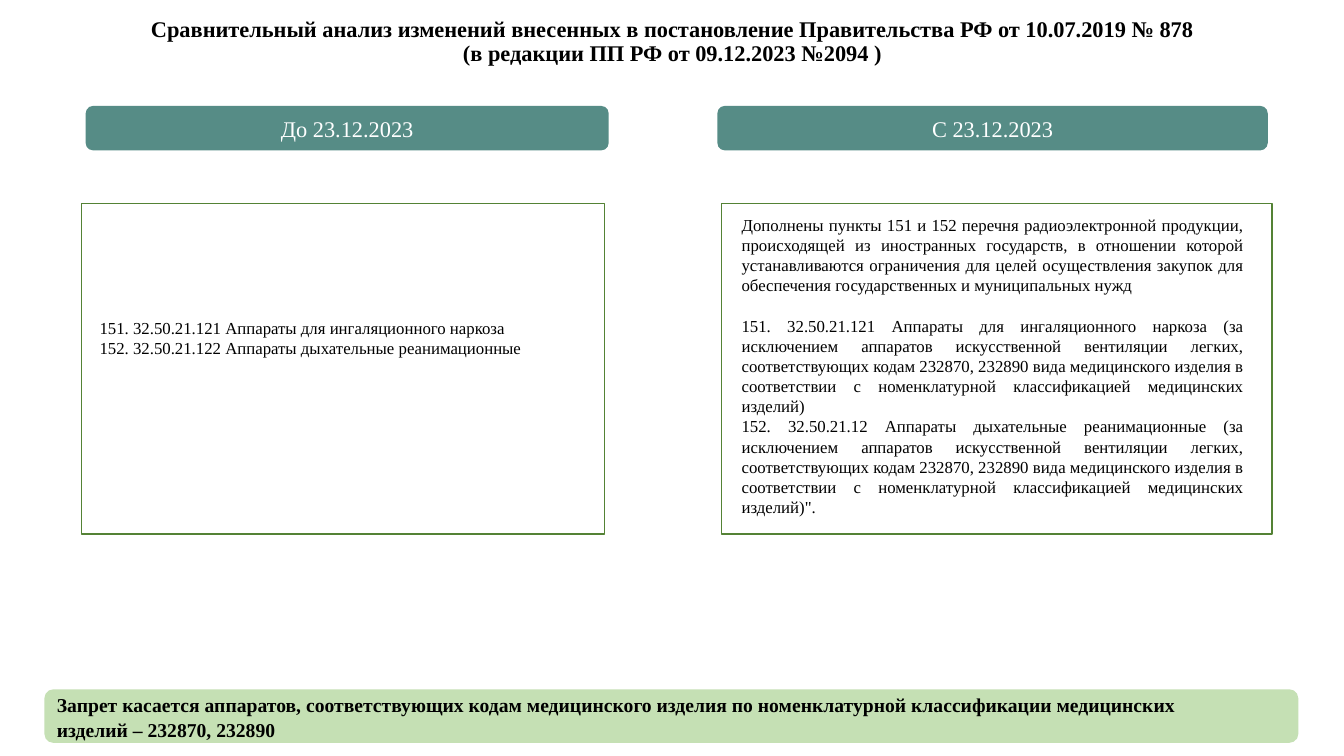
from dataclasses import dataclass

from pptx import Presentation
from pptx.dml.color import RGBColor
from pptx.enum.shapes import MSO_SHAPE
from pptx.enum.text import MSO_ANCHOR, PP_ALIGN
from pptx.util import Cm, Pt


@dataclass(frozen=True)
class Theme:
    """Colours, font and type sizes of the slide."""
    font: str = "Times New Roman"
    ink: str = "000000"
    light: str = "FFFFFF"
    header: str = "568C86"
    frame: str = "548235"
    note: str = "C5E0B4"
    heading_size: int = 16
    note_size: int = 14
    body_size: int = 12


def write(frame, paragraphs, *, font, size, color, bold=False, align=PP_ALIGN.LEFT,
          anchor=MSO_ANCHOR.TOP, spacing=1.0, gap_after_first=0):
    """Fill a text frame with equally formatted paragraphs."""
    frame.word_wrap = True
    frame.vertical_anchor = anchor
    for index, text in enumerate(paragraphs):
        para = frame.add_paragraph() if index else frame.paragraphs[0]
        para.alignment = align
        para.line_spacing = spacing
        if index == 0:
            para.space_after = Pt(gap_after_first)
        span = para.add_run()
        span.text = text
        span.font.name = font
        span.font.size = Pt(size)
        span.font.bold = bold
        span.font.color.rgb = RGBColor.from_string(color)


class ComparisonSlide:
    """Draws the elements of a before-and-after slide."""

    def __init__(self, page, theme):
        """Keep the page and its theme."""
        self.page = page
        self.theme = theme

    def text(self, place, paragraphs, size, **style):
        """Add a text box in the ink colour."""
        box = self.page.shapes.add_textbox(*map(Cm, place))
        write(box.text_frame, paragraphs, font=self.theme.font, size=size,
              color=self.theme.ink, **style)

    def bar(self, place, paragraphs, fill, size, color, **style):
        """Add a filled rounded bar with text."""
        box = self.page.shapes.add_shape(MSO_SHAPE.ROUNDED_RECTANGLE, *map(Cm, place))
        box.shadow.inherit = False
        box.fill.solid()
        box.fill.fore_color.rgb = RGBColor.from_string(fill)
        box.line.fill.background()
        write(box.text_frame, paragraphs, font=self.theme.font, size=size,
              color=color, anchor=MSO_ANCHOR.MIDDLE, **style)

    def panel(self, place):
        """Add an empty outlined panel."""
        box = self.page.shapes.add_shape(MSO_SHAPE.RECTANGLE, *map(Cm, place))
        box.shadow.inherit = False
        box.fill.background()
        box.line.color.rgb = RGBColor.from_string(self.theme.frame)
        box.line.width = Pt(1)


def main():
    """Build and save the slide."""
    theme = Theme()
    deck = Presentation()
    deck.slide_width, deck.slide_height = Cm(33.87), Cm(19.05)
    slide = ComparisonSlide(deck.slides.add_slide(deck.slide_layouts[6]), theme)

    slide.text((2.34, 0.51, 29.21, 1.12), [
        "Сравнительный анализ изменений внесенных в постановление Правительства РФ от 10.07.2019 № 878",
        "(в редакции ПП РФ от 09.12.2023 №2094 )",
    ], theme.heading_size, bold=True, align=PP_ALIGN.CENTER,
        anchor=MSO_ANCHOR.MIDDLE, spacing=0.9)

    columns = [("До 23.12.2023", 2.16, 2.06, 13.18),
               ("С 23.12.2023", 18.08, 18.19, 13.87)]
    for label, header_left, panel_left, width in columns:
        slide.bar((header_left, 2.67, width, 1.12), [label], theme.header,
                  theme.heading_size, theme.light, align=PP_ALIGN.CENTER)
        slide.panel((panel_left, 5.13, width, 8.33))

    slide.bar((1.12, 17.37, 31.6, 1.35), [
        "Запрет касается аппаратов, соответствующих кодам медицинского изделия "
        "по номенклатурной классификации медицинских",
        "изделий – 232870, 232890",
    ], theme.note, theme.note_size, theme.ink, bold=True,
        align=PP_ALIGN.JUSTIFY, spacing=1.07)

    slide.text((2.26, 7.87, 12.62, 1.27), [
        "151. 32.50.21.121 Аппараты для ингаляционного наркоза",
        "152. 32.50.21.122 Аппараты дыхательные реанимационные",
    ], theme.body_size)

    exception = ("(за исключением аппаратов искусственной вентиляции легких, "
                 "соответствующих кодам 232870, 232890 вида медицинского изделия "
                 "в соответствии с номенклатурной классификацией медицинских изделий)")
    slide.text((18.44, 5.28, 13.16, 8.46), [
        "Дополнены пункты 151 и 152 перечня радиоэлектронной продукции, "
        "происходящей из иностранных государств, в отношении которой "
        "устанавливаются ограничения для целей осуществления закупок для "
        "обеспечения государственных и муниципальных нужд",
        f"151. 32.50.21.121 Аппараты для ингаляционного наркоза {exception}",
        f"152. 32.50.21.12 Аппараты дыхательные реанимационные {exception}\".",
    ], theme.body_size, align=PP_ALIGN.JUSTIFY, gap_after_first=14.4)

    deck.save("out.pptx")


if __name__ == "__main__":
    main()
